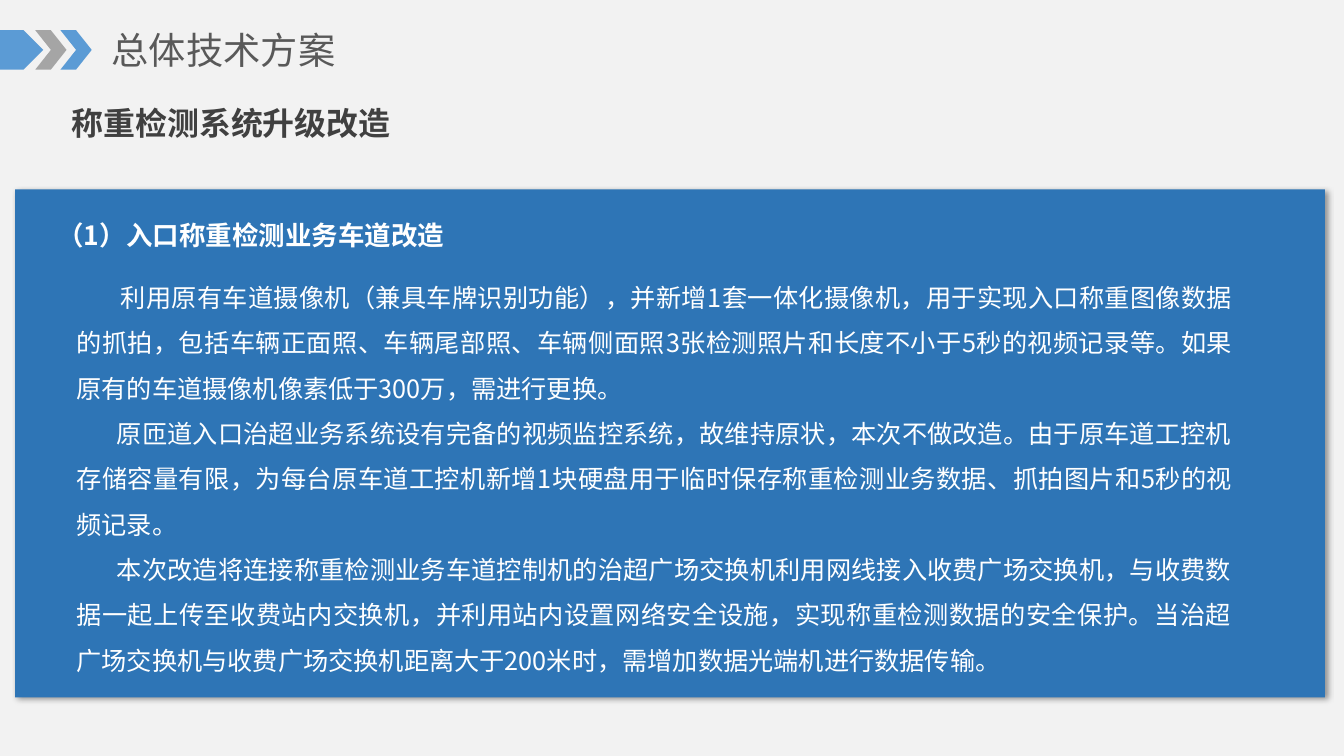
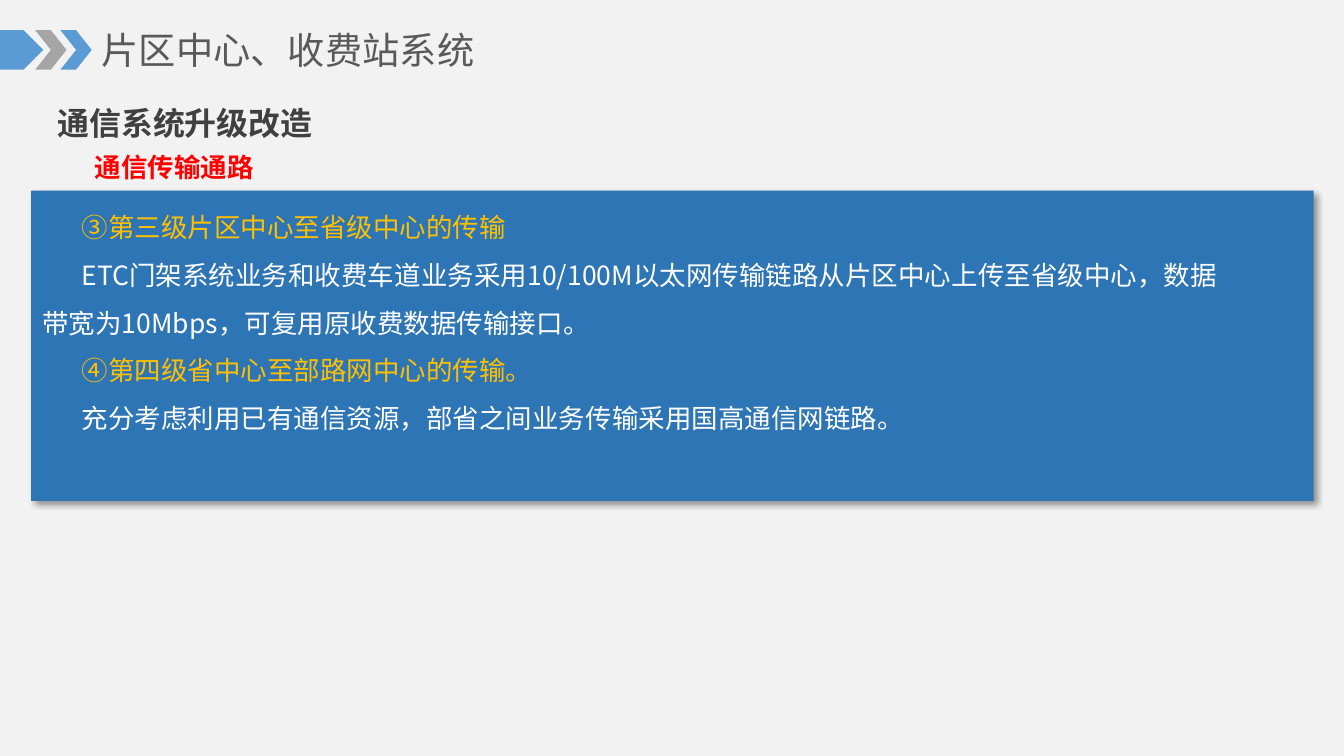
from dataclasses import dataclass
from typing import Any

from lxml import etree
from pptx import Presentation
from pptx.dml.color import RGBColor
from pptx.enum import lang, shapes, text
from pptx.oxml import ns
from pptx.util import Inches, Pt


@dataclass(frozen=True)
class Theme:
    font: str = "Noto Sans CJK SC"
    background: str = "F2F2F2"
    panel: str = "2E75B6"
    blue: str = "5B9BD5"
    gray: str = "A5A5A5"
    title: str = "595959"
    heading: str = "404040"
    white: str = "FFFFFF"
    gold: str = "FFC000"
    red: str = "FF0000"
    title_size: float = 26.6
    heading_size: float = 22.8
    topic_size: float = 18.9
    body_size: float = 18
    line_spacing: float = 1.5


THEME = Theme()


@dataclass(frozen=True)
class Box:
    left: float
    top: float
    width: float
    height: float

    def lengths(self) -> list[int]:
        return [Inches(v) for v in (self.left, self.top, self.width, self.height)]


@dataclass(frozen=True)
class Line:
    words: str
    size: float
    color: str
    bold: bool = False
    indent: float = 0
    spacing: float = THEME.line_spacing
    align: Any = text.PP_ALIGN.JUSTIFY


@dataclass(frozen=True)
class TextBlock:
    box: Box
    lines: list[Line]


@dataclass(frozen=True)
class Page:
    title: str
    title_box: Box
    panel: Box
    blocks: list[TextBlock]


@dataclass(frozen=True)
class Arrow:
    preset: Any
    left: float
    width: float
    color: str


ARROWS = [
    Arrow(shapes.MSO_SHAPE.CHEVRON, 0.35, 0.31, THEME.gray),
    Arrow(shapes.MSO_SHAPE.CHEVRON, 0.6, 0.31, THEME.blue),
    Arrow(shapes.MSO_SHAPE.PENTAGON, 0, 0.43, THEME.blue),
]


def heading(words: str) -> Line:
    return Line(words, THEME.heading_size, THEME.heading, True, 0.07)


def topic(words: str, color: str) -> Line:
    return Line(words, THEME.topic_size, color, True)


def body(words: str, indent: float = 0.4) -> Line:
    return Line(words, THEME.body_size, THEME.white, indent=indent)


def passage(words: str, color: str) -> Line:
    return Line(words, THEME.topic_size, color, indent=0.39, align=text.PP_ALIGN.LEFT)


PAGES = [
    Page(
        "总体技术方案",
        Box(1.01, 0.22, 2.99, 0.55),
        Box(0.15, 1.88, 12.99, 5.04),
        [
            TextBlock(Box(0.54, 0.79, 5.15, 0.67), [heading("称重检测系统升级改造")]),
            TextBlock(
                Box(0.47, 1.97, 6.03, 0.67),
                [topic("（1）入口称重检测业务车道改造", THEME.white)],
            ),
            TextBlock(
                Box(0.66, 2.6, 11.66, 4.19),
                [
                    body(
                        "利用原有车道摄像机（兼具车牌识别功能），并新增1套一体化摄像机，"
                        "用于实现入口称重图像数据的抓拍，包括车辆正面照、车辆尾部照、"
                        "车辆侧面照3张检测照片和长度不小于5秒的视频记录等。"
                        "如果原有的车道摄像机像素低于300万，需进行更换。",
                        0.44,
                    ),
                    body(
                        "原匝道入口治超业务系统设有完备的视频监控系统，故维持原状，"
                        "本次不做改造。由于原车道工控机存储容量有限，"
                        "为每台原车道工控机新增1块硬盘用于临时保存称重检测业务数据、"
                        "抓拍图片和5秒的视频记录。"
                    ),
                    body(
                        "本次改造将连接称重检测业务车道控制机的治超广场交换机"
                        "利用网线接入收费广场交换机，与收费数据一起上传至收费站内交换机，"
                        "并利用站内设置网络安全设施，实现称重检测数据的安全保护。"
                        "当治超广场交换机与收费广场交换机距离大于200米时，"
                        "需增加数据光端机进行数据传输。"
                    ),
                ],
            ),
        ],
    ),
    Page(
        "片区中心、收费站系统",
        Box(0.91, 0.22, 5.58, 0.55),
        Box(0.31, 1.89, 12.72, 3.08),
        [
            TextBlock(Box(0.4, 0.79, 5.15, 0.67), [heading("通信系统升级改造")]),
            TextBlock(
                Box(0.32, 1.89, 11.99, 2.5),
                [
                    passage("③第三级片区中心至省级中心的传输", THEME.gold),
                    passage(
                        "ETC门架系统业务和收费车道业务采用10/100M以太网传输链路"
                        "从片区中心上传至省级中心，数据带宽为10Mbps，"
                        "可复用原收费数据传输接口。",
                        THEME.white,
                    ),
                    passage("④第四级省中心至部路网中心的传输。", THEME.gold),
                    passage(
                        "充分考虑利用已有通信资源，部省之间业务传输采用国高通信网链路。",
                        THEME.white,
                    ),
                ],
            ),
            TextBlock(Box(0.84, 1.29, 5.15, 0.67), [topic("通信传输通路", THEME.red)]),
        ],
    ),
]


def apply(target: Any, formats: dict[str, Any]) -> None:
    for name, value in formats.items():
        setattr(target, name, value)


def add_filled(parent: Any, preset: Any, box: Box, color: str) -> Any:
    shape = parent.add_shape(preset, *box.lengths())
    shape.shadow.inherit = False
    shape.fill.solid()
    shape.fill.fore_color.rgb = RGBColor.from_string(color)
    shape.line.fill.background()
    return shape


def add_panel(slide: Any, box: Box) -> None:
    panel = add_filled(slide.shapes, shapes.MSO_SHAPE.RECTANGLE, box, THEME.panel)
    effects = panel._element.spPr.find(ns.qn("a:effectLst"))
    shadow = etree.SubElement(
        effects,
        ns.qn("a:outerShdw"),
        blurRad=str(Pt(4)),
        dist=str(Pt(3)),
        dir="2700000",
        algn="tl",
        rotWithShape="0",
    )
    color = etree.SubElement(shadow, ns.qn("a:srgbClr"), val="000000")
    etree.SubElement(color, ns.qn("a:alpha"), val="40000")


def add_text(parent: Any, block: TextBlock) -> None:
    frame = parent.add_textbox(*block.box.lengths()).text_frame
    frame.word_wrap = True
    for index, line in enumerate(block.lines):
        paragraph = frame.add_paragraph() if index else frame.paragraphs[0]
        apply(paragraph, {"alignment": line.align, "line_spacing": line.spacing})
        if line.indent:
            paragraph._p.get_or_add_pPr().set("indent", str(Inches(line.indent)))
        run = paragraph.add_run()
        run.text = line.words
        apply(
            run.font,
            {
                "name": THEME.font,
                "size": Pt(line.size),
                "bold": line.bold,
                "language_id": lang.MSO_LANGUAGE_ID.SIMPLIFIED_CHINESE,
            },
        )
        run.font.color.rgb = RGBColor.from_string(line.color)
        etree.SubElement(run._r.get_or_add_rPr(), ns.qn("a:ea"), typeface=THEME.font)


def add_header(slide: Any, page: Page) -> None:
    group = slide.shapes.add_group_shape().shapes
    for arrow in ARROWS:
        box = Box(arrow.left, 0.3, arrow.width, 0.39)
        add_filled(group, arrow.preset, box, arrow.color)
    title = Line(
        page.title, THEME.title_size, THEME.title, spacing=1.0, align=text.PP_ALIGN.LEFT
    )
    add_text(group, TextBlock(page.title_box, [title]))


def add_page(presentation: Any, page: Page) -> None:
    slide = presentation.slides.add_slide(presentation.slide_layouts[6])
    add_panel(slide, page.panel)
    add_header(slide, page)
    for block in page.blocks:
        add_text(slide.shapes, block)


def main() -> None:
    presentation = Presentation()
    apply(presentation, {"slide_width": Inches(13.33), "slide_height": Inches(7.5)})
    background = presentation.slide_master.background.fill
    background.solid()
    background.fore_color.rgb = RGBColor.from_string(THEME.background)
    for page in PAGES:
        add_page(presentation, page)
    presentation.save("out.pptx")


if __name__ == "__main__":
    main()
